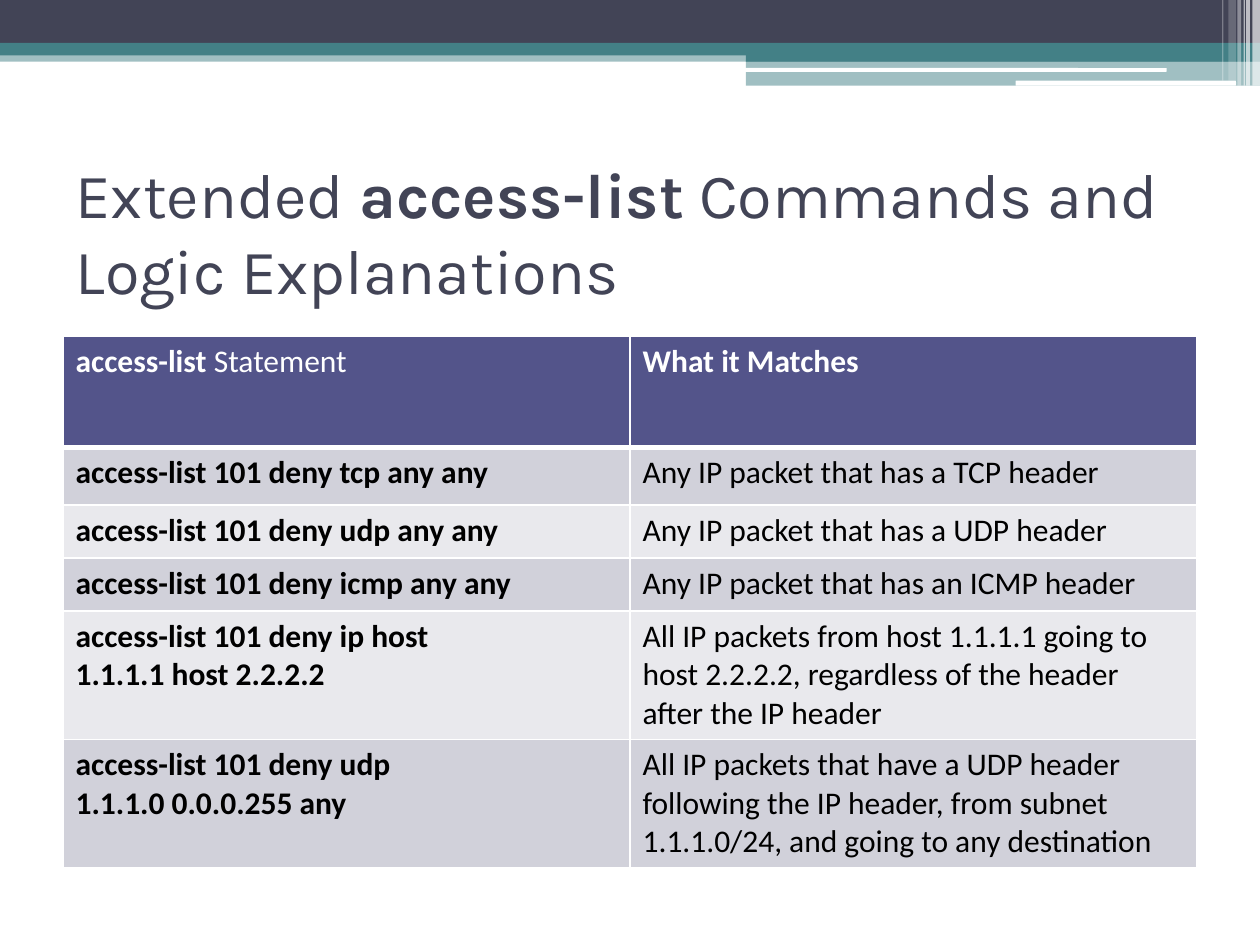
from lxml import etree
from pptx import Presentation
from pptx import util as u
from pptx.dml.color import RGBColor
from pptx.enum import shapes, text
from pptx.oxml import ns

hues = {"ink": "424456", "teal": "438086", "white": "FFFFFF", "black": "000000",
        "head": "53548A", "dark": "D1D1DA", "light": "E9E9ED"}


def write(para, words, size=18, font="Calibri", hue="black", bold=False):
    run = para.add_run()
    run.text = words
    run.font.size = u.Pt(size)
    run.font.name = font
    run.font.bold = bold
    run.font.color.rgb = RGBColor.from_string(hues[hue])


deck = Presentation()
deck.slide_width, deck.slide_height = u.Inches(10), u.Inches(7.5)
slide = deck.slides.add_slide(deck.slide_layouts[5])

rect, round_rect = shapes.MSO_SHAPE.RECTANGLE, shapes.MSO_SHAPE.ROUNDED_RECTANGLE
bars = [
    (rect, 0, 0.4, 10, 0.09, "teal", 50),
    (rect, 0, 0, 10, 0.34, "ink", 100),
    (rect, 0, 0.34, 10, 0.1, "teal", 100),
    (rect, 5.92, 0.39, 4.08, 0.1, "teal", 100),
    (rect, 5.92, 0.48, 4.08, 0.2, "teal", 50),
    (round_rect, 5.91, 0.54, 3.35, 0.03, "white", 100),
    (round_rect, 8.06, 0.64, 1.75, 0.04, "white", 100),
    (rect, 9.94, 0, 0.06, 0.68, "white", 65),
    (rect, 9.89, 0, 0.03, 0.68, "white", 65),
    (rect, 9.87, 0, 0.01, 0.68, "white", 60),
    (rect, 9.82, 0, 0.03, 0.68, "white", 40),
    (rect, 9.75, 0, 0.06, 0.64, "white", 20),
    (rect, 9.7, 0, 0.01, 0.64, "white", 30),
]
for kind, left, top, width, height, hue, alpha in bars:
    bar = slide.shapes.add_shape(kind, *map(u.Inches, (left, top, width, height)))
    bar.shadow.inherit = False
    bar.line.fill.background()
    bar.fill.solid()
    bar.fill.fore_color.rgb = RGBColor.from_string(hues[hue])
    if alpha < 100:
        tint = bar.fill._xPr.find(".//" + ns.qn("a:srgbClr"))
        etree.SubElement(tint, ns.qn("a:alpha"), val=str(alpha * 1000))

title = slide.shapes.title
title.left, title.top, title.width, title.height = map(u.Inches, (0.5, 1.25, 9, 1.17))
frame = title.text_frame
frame.auto_size = text.MSO_AUTO_SIZE.NONE
frame.vertical_anchor = text.MSO_ANCHOR.MIDDLE
para = frame.paragraphs[0]
para.alignment = text.PP_ALIGN.LEFT
for words, bold in [("Extended ", False), ("access-list", True),
                    (" Commands and Logic Explanations", False)]:
    write(para, words, size=36, font="Karla", hue="ink", bold=bold)

rows = [
    (0.88, [[("access-list", True), (" Statement", False)]], "What it Matches"),
    (0.46, [[("access-list 101 deny tcp any any", True)]],
     "Any IP packet that has a TCP header"),
    (0.42, [[("access-list 101 deny udp any any", True)]],
     "Any IP packet that has a UDP header"),
    (0.42, [[("access-list 101 deny icmp any any", True)]],
     "Any IP packet that has an ICMP header"),
    (1.02, [[("access-list 101 deny ip host", True)], [("1.1.1.1 host 2.2.2.2", True)]],
     "All IP packets from host 1.1.1.1 going to host 2.2.2.2, "
     "regardless of the header after the IP header"),
    (1.02, [[("access-list 101 deny udp", True)], [("1.1.1.0 0.0.0.255 any", True)]],
     "All IP packets that have a UDP header following the IP header, "
     "from subnet 1.1.1.0/24, and going to any destination"),
]
grid = slide.shapes.add_table(len(rows), 2, u.Inches(0.5), u.Inches(2.67),
                              u.Inches(9), u.Inches(sum(row[0] for row in rows))).table
for col in grid.columns:
    col.width = u.Inches(4.5)

for r, (height, rule, match) in enumerate(rows):
    grid.rows[r].height = u.Inches(height)
    for c, lines in enumerate([rule, [[(match, r == 0)]]]):
        cell = grid.cell(r, c)
        cell.fill.solid()
        shade = "head" if r == 0 else "dark" if r % 2 else "light"
        cell.fill.fore_color.rgb = RGBColor.from_string(hues[shade])
        for n, line in enumerate(lines):
            para = cell.text_frame.paragraphs[0] if n == 0 else cell.text_frame.add_paragraph()
            for words, bold in line:
                write(para, words, hue="black" if r else "white", bold=bold)
        props = cell._tc.get_or_add_tcPr()
        for n, side in enumerate("LRTB"):
            thick = 3 if (r, side) in [(0, "B"), (1, "T")] else 1
            edge = etree.Element(ns.qn("a:ln" + side), w=str(u.Pt(thick)))
            paint = etree.SubElement(edge, ns.qn("a:solidFill"))
            etree.SubElement(paint, ns.qn("a:srgbClr"), val=hues["white"])
            props.insert(n, edge)

deck.save("out.pptx")
